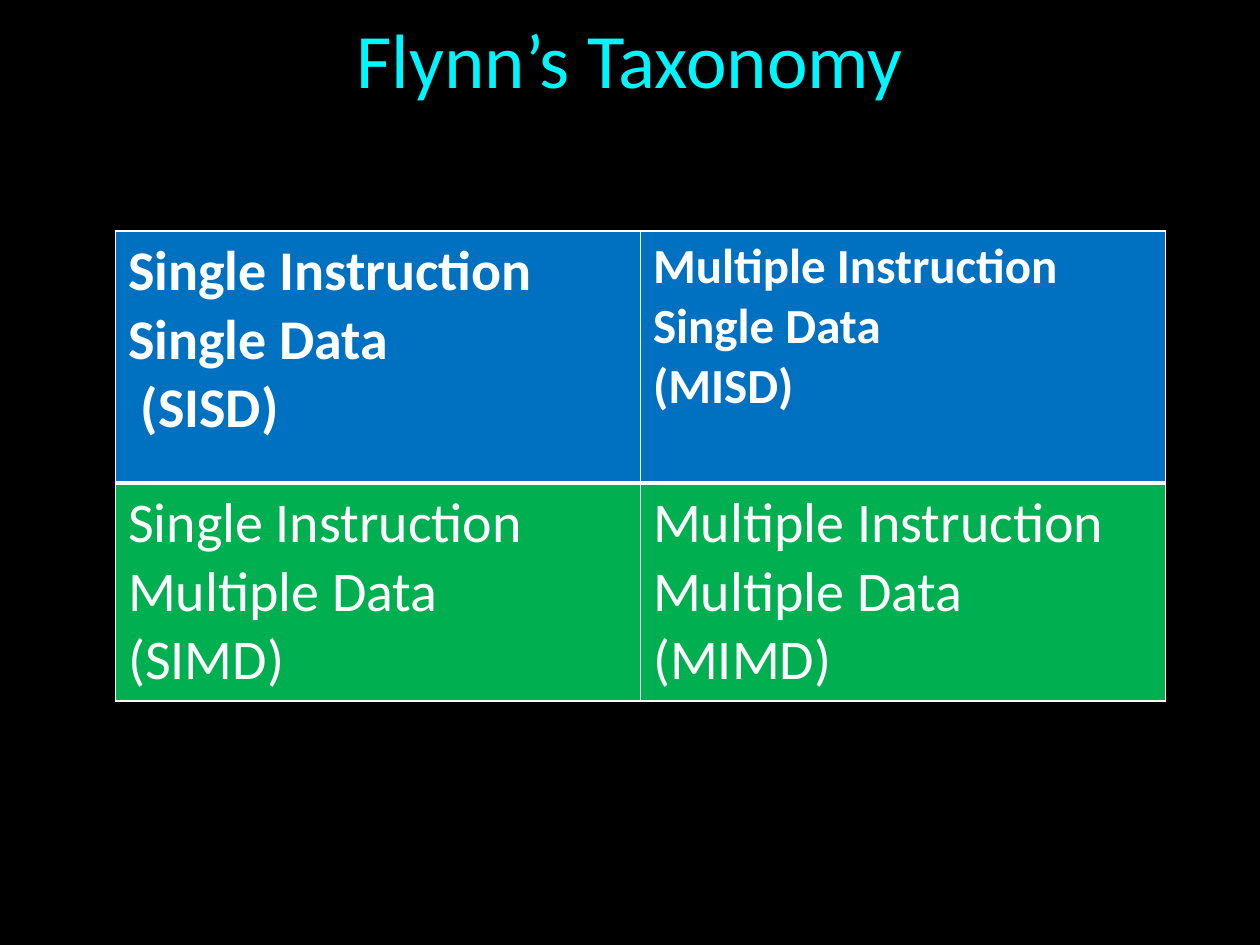
from lxml import etree
from pptx import Presentation
from pptx.dml.color import RGBColor
from pptx.enum.text import MSO_ANCHOR, PP_ALIGN
from pptx.oxml.ns import qn
from pptx.util import Pt

CENTER = PP_ALIGN.CENTER
MIDDLE = MSO_ANCHOR.MIDDLE
BLACK, WHITE, CYAN = "000000", "FFFFFF", "00F6FF"
BLUE, GREEN = "0070C0", "00B050"


def color(text):
    """Turn a hex string into a colour."""
    return RGBColor.from_string(text)


class Deck:
    """Hold the font and the current slide."""

    def __init__(self, show, font):
        """Add a black title-only slide."""
        self.font = font
        self.slide = show.slides.add_slide(show.slide_layouts[5])
        fill = self.slide.background.fill
        fill.solid()
        fill.fore_color.rgb = color(BLACK)

    def style(self, para, size, tint, bold=False):
        """Set the font of a paragraph."""
        font = para.font
        font.name, font.size, font.bold = self.font, Pt(size), bold
        font.color.rgb = color(tint)

    def title(self, text, left, top, width, height, size):
        """Place and format the title."""
        box = self.slide.shapes.title
        box.left, box.top, box.width, box.height = map(Pt, (left, top, width, height))
        frame = box.text_frame
        frame.text = text
        frame.vertical_anchor = MIDDLE
        para = frame.paragraphs[0]
        para.alignment = CENTER
        self.style(para, size, CYAN)

    def border(self, cell, sides):
        """Draw white borders with a width for each side."""
        props = cell._tc.get_or_add_tcPr()
        for spot, (side, width) in enumerate(sides.items()):
            line = etree.Element(qn("a:ln" + side), w=str(Pt(width)))
            fill = etree.SubElement(line, qn("a:solidFill"))
            etree.SubElement(fill, qn("a:srgbClr"), val=WHITE)
            props.insert(spot, line)

    def cell(self, cell, lines, size, back, bold, sides):
        """Fill one table cell."""
        cell.fill.solid()
        cell.fill.fore_color.rgb = color(back)
        cell.text = "\n".join(lines)
        for para in cell.text_frame.paragraphs:
            self.style(para, size, WHITE, bold)
        self.border(cell, sides)

    def table(self, rows, left, top, width, heights):
        """Add a table from rows of fill, weight, borders and cells."""
        count = len(rows[0][3])
        frame = self.slide.shapes.add_table(
            len(rows), count, Pt(left), Pt(top), Pt(width), Pt(sum(heights)))
        grid = frame.table
        for r, (back, bold, sides, cells) in enumerate(rows):
            grid.rows[r].height = Pt(heights[r])
            for c, (size, lines) in enumerate(cells):
                self.cell(grid.cell(r, c), lines, size, back, bold, sides)


def main():
    """Build the slide and save it."""
    show = Presentation()
    show.slide_width, show.slide_height = Pt(720), Pt(540)
    deck = Deck(show, "Calibri")
    deck.title("Flynn’s Taxonomy", 18, 12, 684, 42, 44)
    rows = [
        (BLUE, True, {"L": 1, "R": 1, "T": 1, "B": 3}, [
            (32, ["Single Instruction Single Data", " (SISD)"]),
            (28, ["Multiple Instruction Single Data", "(MISD)"])]),
        (GREEN, False, {"L": 1, "R": 1, "T": 3, "B": 1}, [
            (32, ["Single Instruction Multiple Data", "(SIMD)"]),
            (32, ["Multiple Instruction Multiple Data", "(MIMD)"])]),
    ]
    deck.table(rows, 66, 132, 600, [144, 124.5])
    show.save("out.pptx")


if __name__ == "__main__":
    main()
